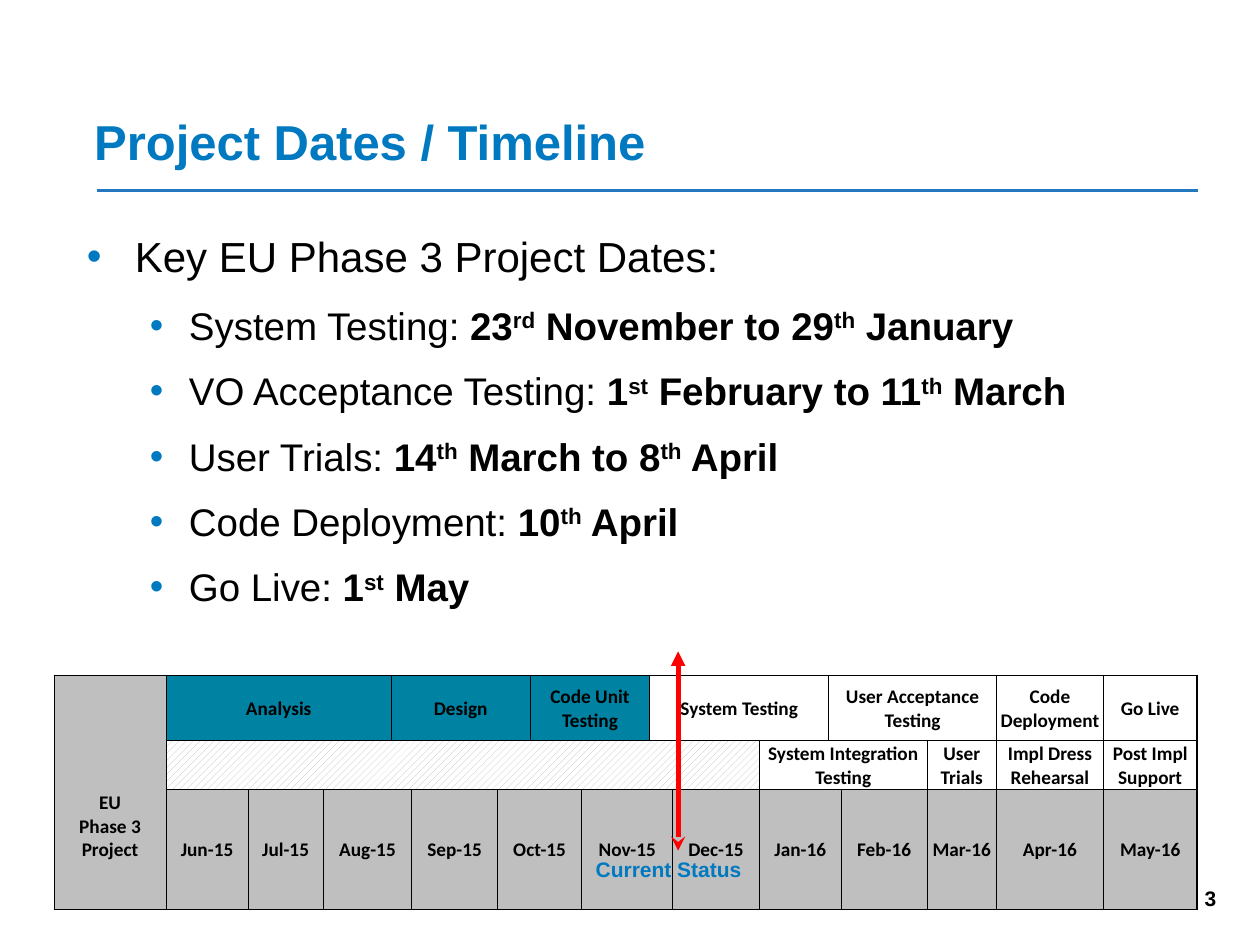
from dataclasses import dataclass
from typing import Optional

import pptx
import pptx.dml.color
import pptx.enum.dml
import pptx.enum.shapes
import pptx.enum.text
import pptx.oxml.ns
import pptx.util
from lxml import etree

Cm, Pt = pptx.util.Cm, pptx.util.Pt
RGBColor = pptx.dml.color.RGBColor
ALIGN = pptx.enum.text.PP_ALIGN
ANCHOR = pptx.enum.text.MSO_ANCHOR
qn = pptx.oxml.ns.qn

BLUE = RGBColor(0x00, 0x79, 0xC1)
RULE = RGBColor(0x24, 0x78, 0xC0)
TEAL = RGBColor(0x00, 0x82, 0xA3)
GREY = RGBColor(0xBF, 0xBF, 0xBF)
RED = RGBColor(0xFF, 0x00, 0x00)
BLACK = RGBColor(0x00, 0x00, 0x00)
WHITE = RGBColor(0xFF, 0xFF, 0xFF)


@dataclass
class Phase:
    text: str
    span: int = 1
    fill: Optional[RGBColor] = None
    hatched: bool = False


@dataclass
class Milestone:
    label: str
    dates: str = ""  # ordinal suffixes stand between carets


@dataclass
class Level:
    size: int
    indent: float
    hanging: float
    after: int


MILESTONES = [
    Milestone("Key EU Phase 3 Project Dates:"),
    Milestone("System Testing: ", "23^rd^ November to 29^th^ January"),
    Milestone("VO Acceptance Testing: ", "1^st^ February to 11^th^ March"),
    Milestone("User Trials: ", "14^th^ March to 8^th^ April"),
    Milestone("Code Deployment: ", "10^th^ April"),
    Milestone("Go Live: ", "1^st^ May"),
]
HEADING = Level(24, 0.97, 0.97, 12)
ITEM = Level(22, 2.06, 0.79, 11)

COLUMNS = [2.26, 1.65, 1.52, 1.37, 0.41, 1.73, 0.66, 1.04, 1.37,
           0.46, 1.75, 1.4, 0.25, 1.73, 1.4, 2.16, 1.88]
ROWS = [1.32, 0.99, 2.41]
MONTHS = ["Jun-15", "Jul-15", "Aug-15", "Sep-15", "Oct-15", "Nov-15",
          "Dec-15", "Jan-16", "Feb-16", "Mar-16", "Apr-16", "May-16"]
WIDE_MONTHS = {"Aug-15", "Oct-15", "Nov-15", "Jan-16"}
PHASES = [
    [Phase("Analysis", 3, TEAL), Phase("Design", 3, TEAL),
     Phase("Code Unit Testing", 2, TEAL), Phase("System Testing", 3),
     Phase("User Acceptance Testing", 3), Phase("Code Deployment"),
     Phase("Go Live")],
    [Phase("", 10, hatched=True), Phase("System Integration Testing", 3),
     Phase("User Trials"), Phase("Impl Dress Rehearsal"),
     Phase("Post Impl Support")],
    [Phase(m, 2 if m in WIDE_MONTHS else 1, GREY) for m in MONTHS],
]


def set_format(target, values: dict) -> None:
    for name, value in values.items():
        setattr(target, name, value)


def add_run(p, text: str, size: int, color=BLACK, bold=False,
            font="Arial"):
    r = p.add_run()
    r.text = text
    set_format(r.font, {"name": font, "size": Pt(size), "bold": bold})
    r.font.color.rgb = color
    return r


def add_text_box(s, left: float, top: float, width: float, height: float,
                 anchor=ANCHOR.TOP):
    tf = s.shapes.add_textbox(Cm(left), Cm(top), Cm(width),
                              Cm(height)).text_frame
    set_format(tf, {"word_wrap": True, "vertical_anchor": anchor})
    return tf


def add_line(s, x1: float, y1: float, x2: float, y2: float,
             color: RGBColor, width: float, head="", tail="") -> None:
    sp = s.shapes.add_connector(pptx.enum.shapes.MSO_CONNECTOR.STRAIGHT,
                                Cm(x1), Cm(y1), Cm(x2), Cm(y2))
    sp.line.width = Pt(width)
    sp.line.color.rgb = color
    sp_pr = sp._element.spPr
    ln = sp_pr.find(qn("a:ln"))
    for tag, kind in (("a:headEnd", head), ("a:tailEnd", tail)):
        if kind:
            etree.SubElement(ln, qn(tag), type=kind)
    etree.SubElement(sp_pr, qn("a:effectLst"))


def add_bullet(p, level: Level) -> None:
    p_pr = p._p.get_or_add_pPr()
    p_pr.set("marL", str(Cm(level.indent)))
    p_pr.set("indent", str(-Cm(level.hanging)))
    p.space_after = Pt(level.after)
    color = etree.SubElement(p_pr, qn("a:buClr"))
    etree.SubElement(color, qn("a:srgbClr"), val=str(BLUE))
    etree.SubElement(p_pr, qn("a:buFont"), typeface="Arial")
    etree.SubElement(p_pr, qn("a:buChar"), char="•")


def add_milestones(tf) -> None:
    for i, item in enumerate(MILESTONES):
        p = tf.add_paragraph() if i else tf.paragraphs[0]
        level = ITEM if i else HEADING
        add_bullet(p, level)
        add_run(p, item.label, level.size)
        for n, part in enumerate(item.dates.split("^")):
            if part:
                r = add_run(p, part, level.size, bold=True)
                if n % 2:
                    r.font._element.set("baseline", "30000")


def set_borders(cell, right: float, bottom: float) -> None:
    tc_pr = cell._tc.get_or_add_tcPr()
    for side, width in (("L", 0.5), ("R", right), ("T", 0.5), ("B", bottom)):
        ln = etree.SubElement(tc_pr, qn(f"a:ln{side}"), w=str(Pt(width)))
        fill = etree.SubElement(ln, qn("a:solidFill"))
        etree.SubElement(fill, qn("a:srgbClr"), val=str(BLACK))


def fill_cell(cell, phase: Phase) -> None:
    if phase.hatched:
        cell.fill.patterned()
        cell.fill.pattern = pptx.enum.dml.MSO_PATTERN.WIDE_UPWARD_DIAGONAL
        cell.fill.fore_color.rgb = GREY
        cell.fill.back_color.rgb = WHITE
    elif phase.fill is not None:
        cell.fill.solid()
        cell.fill.fore_color.rgb = phase.fill
    else:
        cell.fill.background()


def write_cell(cell, phase: Phase, anchor=ANCHOR.MIDDLE, bottom=0.0) -> None:
    set_format(cell, {"margin_left": Cm(0.03), "margin_right": Cm(0.03),
                      "margin_top": Cm(0.03), "margin_bottom": Cm(bottom),
                      "vertical_anchor": anchor})
    for i, line in enumerate(phase.text.split("\n")):
        tf = cell.text_frame
        p = tf.add_paragraph() if i else tf.paragraphs[0]
        p.alignment = ALIGN.CENTER
        if line:
            add_run(p, line, 11, bold=True, font="Calibri")
    fill_cell(cell, phase)


def add_timeline(s, left: float, top: float) -> None:
    table = s.shapes.add_table(len(ROWS), len(COLUMNS), Cm(left), Cm(top),
                               Cm(sum(COLUMNS)), Cm(sum(ROWS))).table
    set_format(table, {"first_row": False, "horz_banding": False})
    for column, width in zip(table.columns, COLUMNS):
        column.width = Cm(width)
    for i, height in enumerate(ROWS):
        table.rows[i].height = Cm(height)
        for j in range(len(COLUMNS)):
            set_borders(table.cell(i, j),
                        1 if j == len(COLUMNS) - 1 else 0.5,
                        1 if i == len(ROWS) - 1 else 0.5)
    project = table.cell(0, 0)
    project.merge(table.cell(len(ROWS) - 1, 0))
    write_cell(project, Phase("EU\nPhase 3\nProject", fill=GREY),
               ANCHOR.BOTTOM, 0.95)
    for i, phases in enumerate(PHASES):
        j = 1
        for phase in phases:
            cell = table.cell(i, j)
            if phase.span > 1:
                cell.merge(table.cell(i, j + phase.span - 1))
            write_cell(cell, phase)
            j += phase.span


def main() -> None:
    prs = pptx.Presentation()
    set_format(prs, {"slide_width": Cm(25.4), "slide_height": Cm(19.05)})
    s = prs.slides.add_slide(prs.slide_layouts[6])

    add_line(s, 1.96, 3.84, 24.16, 3.84, RULE, 1.5)
    tf = add_text_box(s, 1.65, 2.11, 22.48, 1.45, ANCHOR.BOTTOM)
    add_run(tf.paragraphs[0], "Project Dates / Timeline", 28, BLUE, True)
    add_milestones(add_text_box(s, 1.5, 4.52, 22.48, 7.72))
    p = add_text_box(s, 18.85, 17.73, 5.92, 1.02).paragraphs[0]
    p.alignment = ALIGN.RIGHT
    add_run(p, "3", 12, bold=True)

    add_timeline(s, 1.09, 13.61)
    add_line(s, 13.67, 13.13, 13.67, 17.15, RED, 2.75, "triangle", "stealth")
    tf = add_text_box(s, 11.76, 17.15, 3.81, 0.76)
    add_run(tf.paragraphs[0], "Current Status", 12, BLUE, True)
    prs.save("out.pptx")


if __name__ == "__main__":
    main()
